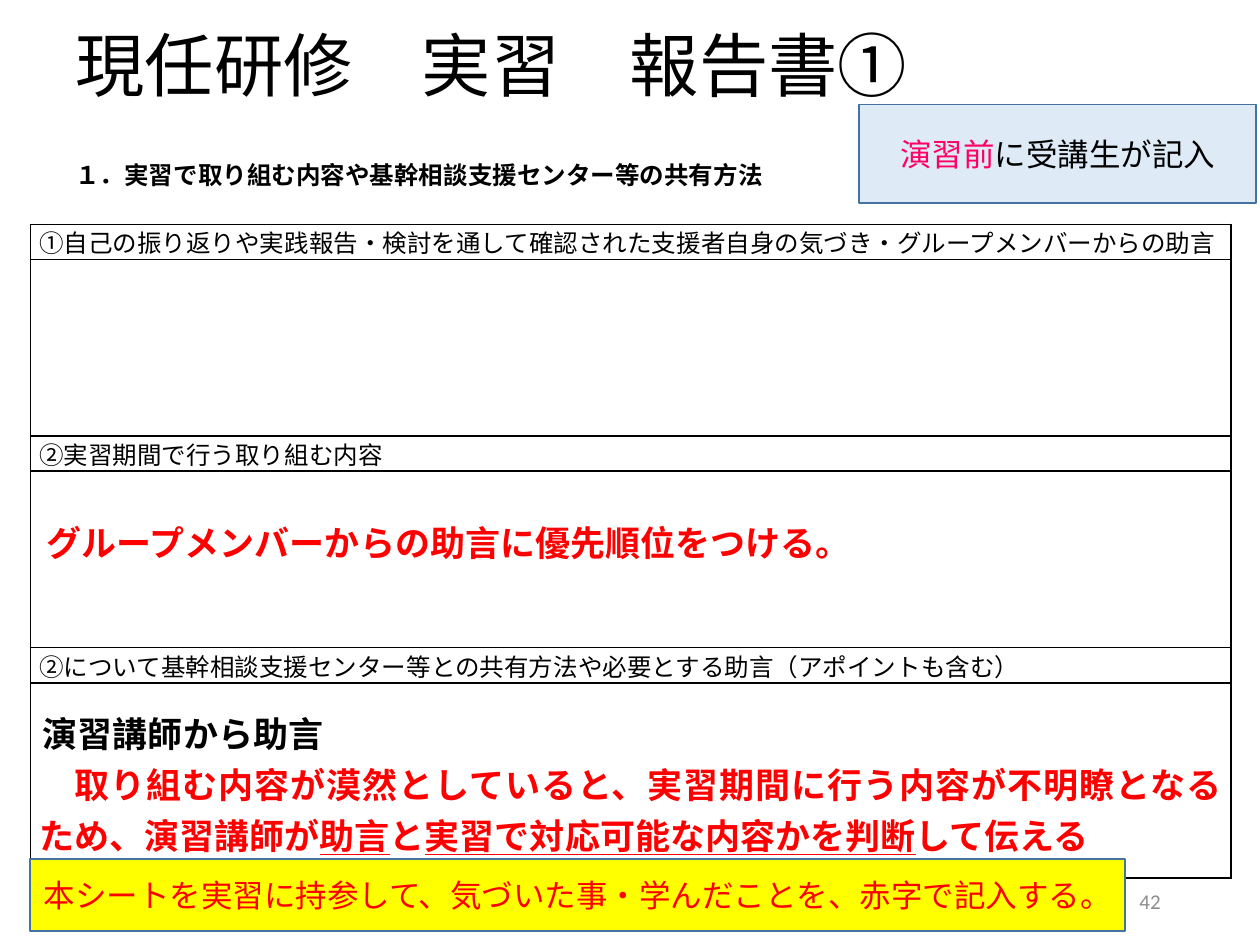
from lxml import etree
from pptx import Presentation
from pptx.dml.color import RGBColor
from pptx.enum import shapes, text
from pptx.oxml.ns import qn
from pptx.util import Inches, Pt

THEME = {
    "black": "000000", "red": "FF0000", "pink": "FF0066", "gray": "8C8C8C",
    "edge": "43739E", "pale": "DEEBF7", "yellow": "FFFF00",
    "sans": "Noto Sans CJK JP", "serif": "Cambria", "latin": "Calibri",
    "title": 39.6, "advice": 20, "note": 18, "body": 14, "small": 12,
}
LEFT, CENTER, RIGHT, JUSTIFY = (
    text.PP_ALIGN.LEFT, text.PP_ALIGN.CENTER, text.PP_ALIGN.RIGHT, text.PP_ALIGN.JUSTIFY)

TITLE = "現任研修　実習　報告書①"
HEADING = "１．実習で取り組む内容や基幹相談支援センター等の共有方法"
PAGE = "42"
BEFORE = [("演習前", {"color": "pink"}), ("に受講生が記入", {})]
BRING = "本シートを実習に持参して、気づいた事・学んだことを、赤字で記入する。"

RED, RED_LINE = {"color": "red"}, {"color": "red", "underline": True}
SECTIONS = [
    {"head": "①自己の振り返りや実践報告・検討を通して確認された支援者自身の気づき・グループメンバーからの助言",
     "height": 1.4, "top": 0, "advice": []},
    {"head": "②実習期間で行う取り組む内容", "height": 1.4, "top": 0.35,
     "advice": [(0.06, [("グループメンバーからの助言に優先順位をつける。", RED)])]},
    {"head": "②について基幹相談支援センター等との共有方法や必要とする助言（アポイントも含む）",
     "height": 1.55, "top": 0.19,
     "advice": [
         (0.03, [("演習講師から助言", {})]),
         (0.28, [("取り組む内容が漠然としていると、実習期間に行う内容が不明瞭となるため、演習講師が", RED),
                 ("助言", RED_LINE), ("と", RED),
                 ("実習で対応可能な内容かを判断", RED_LINE), ("して伝える", RED)]),
     ]},
]


def rgb(name):
    return RGBColor.from_string(THEME[name])


def write(p, content, size="body", font="serif", color="black", bold=False,
          align=LEFT, indent=0, spacing=None):
    p.alignment = align
    if spacing:
        p.line_spacing = spacing
    if indent:
        p._p.get_or_add_pPr().set("indent", str(Inches(indent)))
    for words, style in [(content, {})] if isinstance(content, str) else content:
        r = p.add_run()
        r.text = words
        r.font.name = THEME[font]
        r.font.size = Pt(THEME[size])
        r.font.bold = bold
        r.font.underline = style.get("underline", False)
        r.font.color.rgb = rgb(style.get("color", color))
        ea = etree.SubElement(r._r.get_or_add_rPr(), qn("a:ea"))
        ea.set("typeface", THEME["sans"])


def add_label(s, box, content, fill=None, **fmt):
    at = [Inches(v) for v in box]
    if fill:
        sp = s.shapes.add_shape(shapes.MSO_SHAPE.RECTANGLE, *at)
        sp.shadow.inherit = False
        sp.fill.solid()
        sp.fill.fore_color.rgb = rgb(fill)
        sp.line.color.rgb = rgb("edge")
        sp.line.width = Pt(1)
    else:
        sp = s.shapes.add_textbox(*at)
    tf = sp.text_frame
    tf.word_wrap = True
    tf.vertical_anchor = text.MSO_ANCHOR.MIDDLE
    write(tf.paragraphs[0], content, **fmt)


def frame_cell(cell, top=0):
    cell.margin_left = cell.margin_right = Inches(0.07)
    cell.margin_top, cell.margin_bottom = Inches(top), 0
    cell.fill.background()
    tcPr = cell._tc.get_or_add_tcPr()
    for i, side in enumerate(("lnL", "lnR", "lnT", "lnB")):
        ln = etree.Element(qn("a:" + side), w=str(Pt(1)))
        fill = etree.SubElement(ln, qn("a:solidFill"))
        etree.SubElement(fill, qn("a:srgbClr"), val=THEME["black"])
        tcPr.insert(i, ln)


def add_report(s, left, top, width, head_height):
    height = sum(head_height + sec["height"] for sec in SECTIONS)
    table = s.shapes.add_table(2 * len(SECTIONS), 1, Inches(left), Inches(top),
                               Inches(width), Inches(height)).table
    table.first_row = table.horz_banding = False
    for i, sec in enumerate(SECTIONS):
        head, body = table.cell(2 * i, 0), table.cell(2 * i + 1, 0)
        table.rows[2 * i].height = Inches(head_height)
        table.rows[2 * i + 1].height = Inches(sec["height"])
        frame_cell(head)
        frame_cell(body, sec["top"])
        write(head.text_frame.paragraphs[0], sec["head"], align=JUSTIFY)
        tf = body.text_frame
        for n, (indent, runs) in enumerate(sec["advice"]):
            p = tf.add_paragraph() if n else tf.paragraphs[0]
            write(p, runs, size="advice", bold=True, align=JUSTIFY, indent=indent)


def main():
    prs = Presentation()
    prs.slide_width, prs.slide_height = Inches(10), Inches(7.5)
    s = prs.slides.add_slide(prs.slide_layouts[6])
    add_label(s, (0.5, 0.2, 7.05, 0.69), TITLE, size="title", font="sans", spacing=0.9)
    add_label(s, (7.06, 6.95, 2.25, 0.4), PAGE, size="small", font="latin",
              color="gray", align=RIGHT)
    add_report(s, 0.24, 1.78, 9.53, 0.28)
    add_label(s, (0.5, 1.22, 5.84, 0.34), HEADING, bold=True)
    add_label(s, (6.82, 0.83, 3.15, 0.78), BEFORE, fill="pale", size="note",
              font="sans", align=CENTER)
    add_label(s, (0.24, 6.82, 8.69, 0.57), BRING, fill="yellow", size="note",
              font="latin", color="red", align=CENTER)
    prs.save("out.pptx")


if __name__ == "__main__":
    main()
